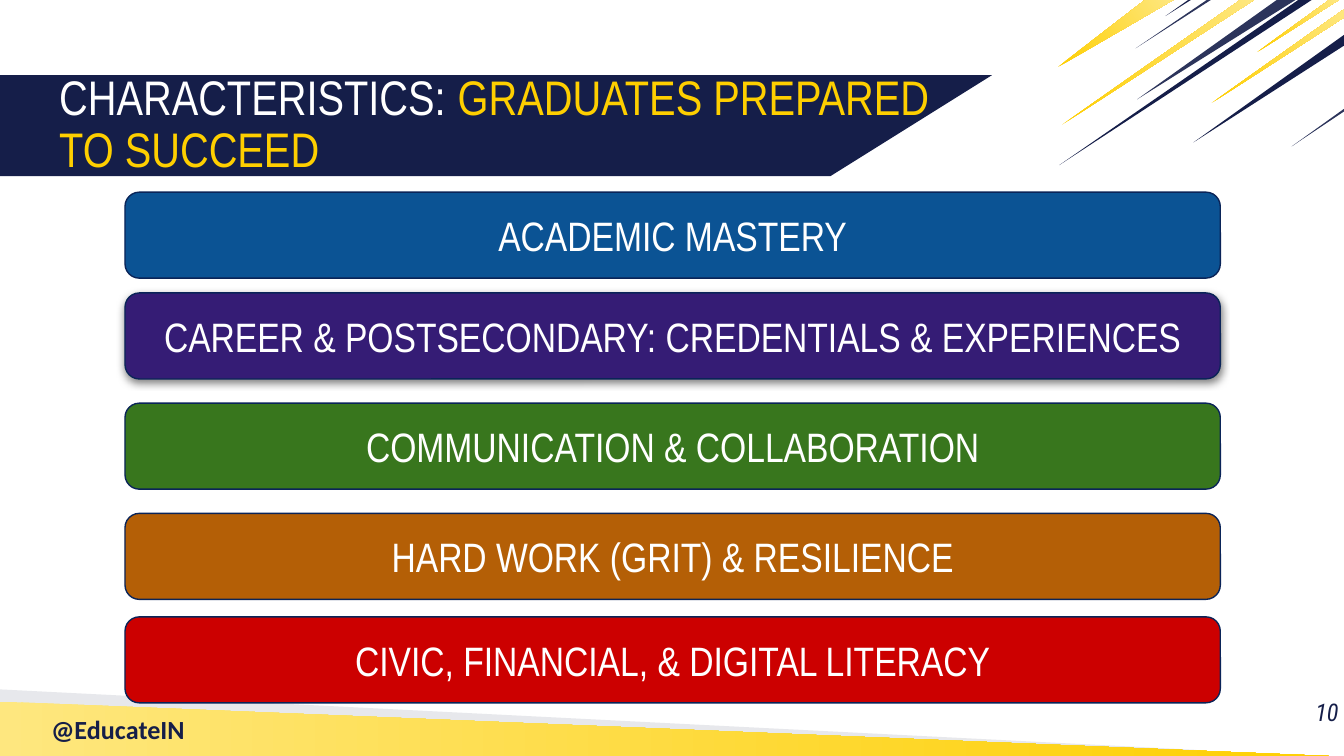
import pptx
import pptx.util
import pptx.dml.color
import pptx.enum.shapes
import pptx.enum.text
import pptx.oxml.ns
import lxml.etree
from dataclasses import dataclass

PX = 9144
ALIGN = pptx.enum.text.PP_ALIGN
ANCHOR = pptx.enum.text.MSO_ANCHOR


@dataclass(frozen=True)
class Theme:
    navy: str = "151E49"
    slate: str = "2C345B"
    gold: str = "FECF00"
    pale_gold: str = "FEE77F"
    mist: str = "E7E8EC"
    white: str = "FFFFFF"
    outline: str = "0A2458"
    blue: str = "0B5394"
    purple: str = "351C75"
    green: str = "38761D"
    orange: str = "B45F06"
    red: str = "CC0000"
    heading_font: str = "Arial Narrow"
    handle_font: str = "Calibri"
    number_font: str = "Roboto Condensed"
    title_size: int = 26
    bar_size: int = 22
    handle_size: int = 14
    number_size: int = 13


THEME = Theme()


def px(*lengths):
    return [pptx.util.Emu(n * PX) for n in lengths]


def rgb(value):
    return pptx.dml.color.RGBColor.from_string(value)


def style_run(r, font, size, color, bold=False, italic=False):
    r.font.name = font
    r.font.size = pptx.util.Pt(size)
    r.font.color.rgb = rgb(color)
    r.font.bold = bold
    r.font.italic = italic


def set_frame(tf, margin, anchor):
    tf.word_wrap = True
    tf.auto_size = pptx.enum.text.MSO_AUTO_SIZE.NONE
    tf.vertical_anchor = anchor
    tf.margin_left, tf.margin_top, tf.margin_right, tf.margin_bottom = px(*[margin] * 4)


def add_polygon(s, box, points, colors, angle=0):
    builder = s.shapes.build_freeform(*points[0], scale=PX)
    builder.add_line_segments(points[1:], close=True)
    sp = builder.convert_to_shape(*px(*box[:2]))
    sp.shadow.inherit = False
    sp.line.fill.background()
    if len(colors) == 1:
        sp.fill.solid()
        sp.fill.fore_color.rgb = rgb(colors[0])
    else:
        sp.fill.gradient()
        sp.fill.gradient_angle = angle
        for stop, color in zip(sp.fill.gradient_stops, colors):
            stop.color.rgb = rgb(color)


def add_label(s, box, text, margin, align, **style):
    sp = s.shapes.add_textbox(*px(*box))
    tf = sp.text_frame
    set_frame(tf, margin, ANCHOR.TOP)
    tf.text = text
    p = tf.paragraphs[0]
    p.alignment = align
    style_run(p.runs[0], **style)


def add_streaks(s, box):
    gold = (THEME.gold, THEME.pale_gold)
    navy, slate = (THEME.navy,), (THEME.slate,)
    streaks = [
        (gold, [(148, 39), (209, 0), (202, 0)]),
        (navy, [(1, 123), (189, 0), (179, 0)]),
        (gold, [(65, 0), (0, 50), (86, 0)]),
        (gold, [(213, 13), (213, 7), (114, 77)]),
        (slate, [(177, 0), (163, 0), (59, 74)]),
        (navy, [(101, 106), (213, 34), (213, 26)]),
        (slate, [(213, 83), (213, 81), (174, 109)]),
        (navy, [(80, 12), (99, 0), (97, 0)]),
        (gold, [(3, 93), (146, 0), (136, 0)]),
        (slate, [(58, 36), (114, 0), (111, 0)]),
    ]
    for colors, points in streaks:
        add_polygon(s, box, points, colors, angle=35)


def add_footer(s, box):
    left, top, width, height = box
    add_polygon(s, box, [(0, 0), (0, height), (890, height - 5)], (THEME.mist,))
    add_polygon(s, box, [(0, 9), (0, height), (width, height)],
                (THEME.pale_gold, THEME.gold))
    add_label(s, (left + 33, top + 13, 204, 20), "@EducateIN", 5, ALIGN.LEFT,
              font=THEME.handle_font, size=THEME.handle_size,
              color=THEME.navy, bold=True)
    add_label(s, (left + 936, top + 6, 60, 43), "10", 0, ALIGN.RIGHT,
              font=THEME.number_font, size=THEME.number_size,
              color=THEME.navy, italic=True)


def add_title(s, box):
    left, top, width, height = box
    add_polygon(s, box, [(0, 0), (0, height), (width - 120, height), (width, 0)],
                (THEME.navy,))
    sp = s.shapes.title
    s.shapes._spTree.append(sp._element)
    sp.left, sp.top, sp.width, sp.height = px(left + 44, top, 670, height)
    tf = sp.text_frame
    set_frame(tf, 0, ANCHOR.MIDDLE)
    p = tf.paragraphs[0]
    p.alignment = ALIGN.LEFT
    p.line_spacing = 0.9
    for text, color in [("CHARACTERISTICS: ", THEME.white),
                        ("GRADUATES PREPARED TO SUCCEED", THEME.gold)]:
        r = p.add_run()
        r.text = text
        style_run(r, THEME.heading_font, THEME.title_size, color)


def add_shadow(sp):
    effects = sp._element.spPr.find(pptx.oxml.ns.qn("a:effectLst"))
    shadow = lxml.etree.SubElement(
        effects, pptx.oxml.ns.qn("a:outerShdw"), blurRad=str(pptx.util.Pt(4.5)),
        dist=str(pptx.util.Pt(1.5)), dir="5400000", algn="bl", rotWithShape="0")
    color = lxml.etree.SubElement(shadow, pptx.oxml.ns.qn("a:srgbClr"), val="000000")
    lxml.etree.SubElement(color, pptx.oxml.ns.qn("a:alpha"), val="50000")


def add_bar(s, box, text, color, raised):
    sp = s.shapes.add_shape(pptx.enum.shapes.MSO_SHAPE.ROUNDED_RECTANGLE, *px(*box))
    sp.shadow.inherit = False
    sp.fill.solid()
    sp.fill.fore_color.rgb = rgb(color)
    sp.line.color.rgb = rgb(THEME.outline)
    sp.line.width = pptx.util.Pt(0.75)
    if raised:
        add_shadow(sp)
    tf = sp.text_frame
    set_frame(tf, 10, ANCHOR.MIDDLE)
    tf.text = text
    p = tf.paragraphs[0]
    p.alignment = ALIGN.CENTER
    style_run(p.runs[0], THEME.heading_font, THEME.bar_size, THEME.white)


def add_characteristics(s, box):
    left, top, width, height = box
    bars = [
        (0, "ACADEMIC MASTERY", THEME.blue, False),
        (75, "CAREER & POSTSECONDARY: CREDENTIALS & EXPERIENCES", THEME.purple, True),
        (157, "COMMUNICATION & COLLABORATION", THEME.green, False),
        (239, "HARD WORK (GRIT) & RESILIENCE", THEME.orange, False),
        (316, "CIVIC, FINANCIAL, & DIGITAL LITERACY", THEME.red, False),
    ]
    bar_height = height - bars[-1][0]
    for offset, text, color, raised in bars:
        add_bar(s, (left, top + offset, width, bar_height), text, color, raised)


def main():
    prs = pptx.Presentation()
    prs.slide_width = px(1000)[0]
    prs.slide_height = prs.slide_width * 9 // 16
    s = prs.slides.add_slide(prs.slide_layouts[5])
    add_footer(s, (0, 513, 1000, 50))
    add_streaks(s, (787, 0, 213, 123))
    add_title(s, (0, 56, 738, 75))
    add_characteristics(s, (93, 143, 815, 380))
    prs.save("out.pptx")


if __name__ == "__main__":
    main()
